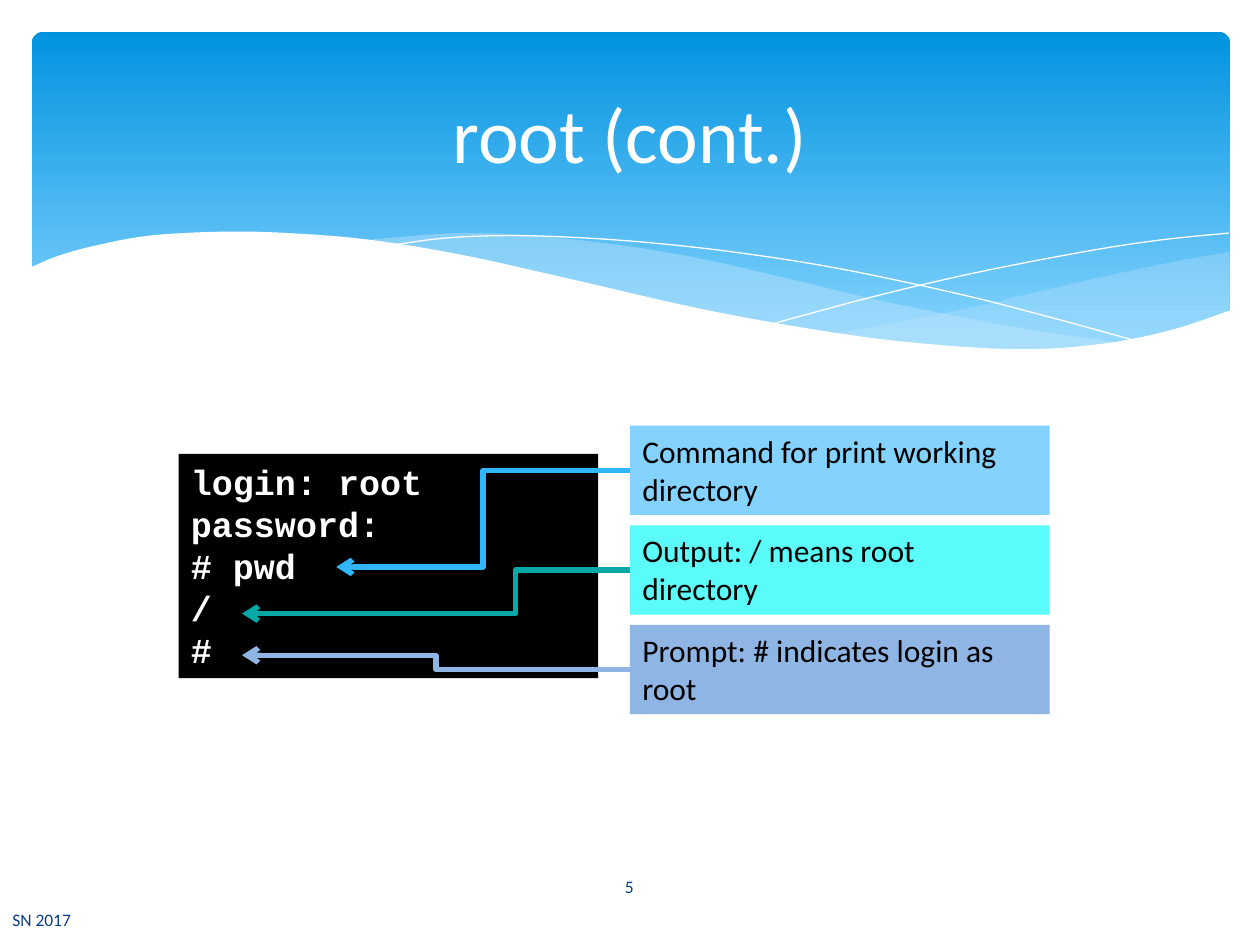
from lxml.etree import SubElement
from pptx import Presentation
from pptx.dml.color import RGBColor
from pptx.enum.shapes import MSO_CONNECTOR, MSO_SHAPE
from pptx.enum.text import MSO_ANCHOR, MSO_AUTO_SIZE, PP_ALIGN
from pptx.oxml.ns import qn
from pptx.util import Cm, Pt

COLOURS = {
    "white": "FFFFFF", "black": "000000", "navy": "073E87",
    "banner_top": "0293E0", "sky": "83D3FE", "veil": "C6E7FC",
    "cyan": "5AFBF8", "periwinkle": "8FB5E5",
    "blue_arrow": "31B6FD", "teal_arrow": "04A8A4",
}

RIGHT_VEIL = [
    [(24.79, 5.08), (23.75, 5.26), (21.87, 5.66), (19.79, 6.15), (17.93, 6.53), (16.79, 6.73)],
    [(16.79, 6.73), (18.26, 6.91), (19.84, 7.04), (21.21, 7.04), (22.78, 6.86), (24.1, 6.53),
     (24.79, 6.27)],
]
LEFT_VEIL = [
    [(22.68, 6.93), (20.5, 6.6), (17.93, 6.1), (15.98, 5.64), (14.1, 5.21), (12.42, 4.93),
     (10.67, 4.75), (9.17, 4.7), (7.26, 4.85)],
    [(7.26, 4.85), (9.19, 5.16), (11.4, 5.64), (13.46, 6.1), (15.7, 6.55), (18.01, 6.91),
     (20.22, 7.06), (21.54, 7.04), (22.68, 6.93)],
]
FALLING_LINE = [
    [(7.85, 4.95), (8.97, 4.8), (10.19, 4.75), (11.43, 4.78), (12.95, 4.88), (14.78, 5.08),
     (16.89, 5.41), (19.3, 5.92), (21.11, 6.38), (23.04, 6.91)],
]
RISING_LINE = [
    [(15.57, 6.53), (17.65, 5.97), (19.71, 5.49), (22, 5.05), (23.47, 4.83), (24.77, 4.7)],
]
WHITE_WAVE = [
    [(24.82, 6.25), (23.62, 6.65), (22.23, 6.93), (20.55, 7.04), (18.44, 6.91), (16.46, 6.65),
     (14.1, 6.22), (11.35, 5.59), (9.27, 5.13), (7.42, 4.83), (5.84, 4.7), (4.5, 4.67),
     (3.02, 4.75), (1.93, 4.95), (1.17, 5.16), (0.58, 5.41)],
    [(0.58, 8.36), (24.82, 8.36)],
]

TERMINAL_LINES = ["login: root", "password:", "# pwd", "/", "#"]
NOTES = [
    ("Command for print working directory", "sky", "blue_arrow", (6.78, 11.43), 0.5),
    ("Output: / means root directory", "cyan", "teal_arrow", (4.88, 12.37), 0.294),
    ("Prompt: # indicates login as root", "periwinkle", "periwinkle", (4.88, 13.21), 0.5),
]
NOTE_LEFT, NOTE_TOP, NOTE_STEP = 12.7, 8.58, 2.01
NOTE_WIDTH, NOTE_HEIGHT = 8.46, 1.8


def colour(name):
    return RGBColor.from_string(COLOURS[name])


def smooth(points, steps=6):
    padded = [points[0], *points, points[-1]]
    curve = [points[0]]
    for a, b, c, d in zip(padded, padded[1:], padded[2:], padded[3:]):
        for step in range(1, steps + 1):
            t = step / steps
            curve.append(tuple(
                (2 * q + (r - p) * t + (2 * p - 5 * q + 4 * r - s) * t ** 2
                 + (3 * q - p - 3 * r + s) * t ** 3) / 2
                for p, q, r, s in zip(a, b, c, d)))
    return curve


def add_curve(page, segments, fill=None, opacity=None):
    points = [(Cm(x), Cm(y)) for segment in segments for x, y in smooth(segment)]
    builder = page.shapes.build_freeform(*points[0])
    builder.add_line_segments(points[1:], close=fill is not None)
    curve = builder.convert_to_shape()
    curve.shadow.inherit = False
    if fill is None:
        curve.fill.background()
        curve.line.color.rgb = colour("white")
        curve.line.width = Pt(0)
        return
    curve.line.fill.background()
    curve.fill.solid()
    curve.fill.fore_color.rgb = colour(fill)
    if opacity is not None:
        tint = curve.fill._xPr.find(".//" + qn("a:srgbClr"))
        SubElement(tint, qn("a:alpha"), val=str(opacity * 1000))


def add_banner(page):
    banner = page.shapes.add_shape(
        MSO_SHAPE.ROUNDED_RECTANGLE, Cm(0.64), Cm(0.64), Cm(24.16), Cm(6.86))
    banner.adjustments[0] = 0.034
    banner.shadow.inherit = False
    banner.line.fill.background()
    banner.fill.gradient()
    banner.fill.gradient_angle = 270
    stops = banner.fill.gradient_stops
    for stop, position, name in zip(stops, (0, 0.9), ("banner_top", "sky")):
        stop.position = position
        stop.color.rgb = colour(name)


def write(box, lines, size, name, font="Calibri", bold=False, align=PP_ALIGN.LEFT):
    frame = box.text_frame
    frame.word_wrap = True
    for index, line in enumerate(lines):
        para = frame.add_paragraph() if index else frame.paragraphs[0]
        para.alignment = align
        span = para.add_run()
        span.text = line
        span.font.name = font
        span.font.size = Pt(size)
        span.font.bold = bold
        span.font.color.rgb = colour(name)


def add_label(page, bounds, text, size, name, align=PP_ALIGN.LEFT):
    box = page.shapes.add_textbox(*map(Cm, bounds))
    box.text_frame.vertical_anchor = MSO_ANCHOR.MIDDLE
    write(box, [text], size, name, align=align)


def add_panel(page, bounds, fill, lines, size, name, **style):
    box = page.shapes.add_shape(MSO_SHAPE.RECTANGLE, *map(Cm, bounds))
    box.shadow.inherit = False
    box.fill.solid()
    box.fill.fore_color.rgb = colour(fill)
    box.line.fill.background()
    box.text_frame.vertical_anchor = MSO_ANCHOR.TOP
    box.text_frame.auto_size = MSO_AUTO_SIZE.SHAPE_TO_FIT_TEXT
    write(box, lines, size, name, **style)


def add_elbow_arrow(page, start, end, name, bend):
    arrow = page.shapes.add_connector(MSO_CONNECTOR.ELBOW, *map(Cm, (*start, *end)))
    arrow.line.color.rgb = colour(name)
    arrow.line.width = Pt(3)
    SubElement(arrow.line._get_or_add_ln(), qn("a:tailEnd"), type="arrow")
    properties = arrow._element.spPr
    SubElement(properties, qn("a:effectLst"))
    guides = properties.find(qn("a:prstGeom")).get_or_add_avLst()
    SubElement(guides, qn("a:gd"), name="adj1", fmla=f"val {round(bend * 100000)}")


def main():
    deck = Presentation()
    deck.slide_width, deck.slide_height = Cm(25.4), Cm(19.05)
    page = deck.slides.add_slide(deck.slide_layouts[6])

    add_banner(page)
    add_curve(page, RIGHT_VEIL, "veil", 29)
    add_curve(page, LEFT_VEIL, "veil", 40)
    add_curve(page, FALLING_LINE)
    add_curve(page, RISING_LINE)
    add_curve(page, WHITE_WAVE, "white")

    add_label(page, (1.27, 0.94, 22.86, 3.48), "root (cont.)", 44, "white", PP_ALIGN.CENTER)
    add_label(page, (11.07, 17.37, 3.23, 1.02), "5", 10, "navy", PP_ALIGN.CENTER)
    add_panel(page, (3.6, 9.15, 8.46, 4.52), "black", TERMINAL_LINES, 20, "white",
              font="Courier New", bold=True)
    for index, (text, fill, line, target, bend) in enumerate(NOTES):
        top = NOTE_TOP + index * NOTE_STEP
        add_panel(page, (NOTE_LEFT, top, NOTE_WIDTH, NOTE_HEIGHT), fill, [text], 18, "black")
        add_elbow_arrow(page, (NOTE_LEFT, top + NOTE_HEIGHT / 2), target, line, bend)
    add_label(page, (0, 18.03, 10.52, 1.02), "SN 2017", 10, "navy")

    deck.save("out.pptx")


if __name__ == "__main__":
    main()
